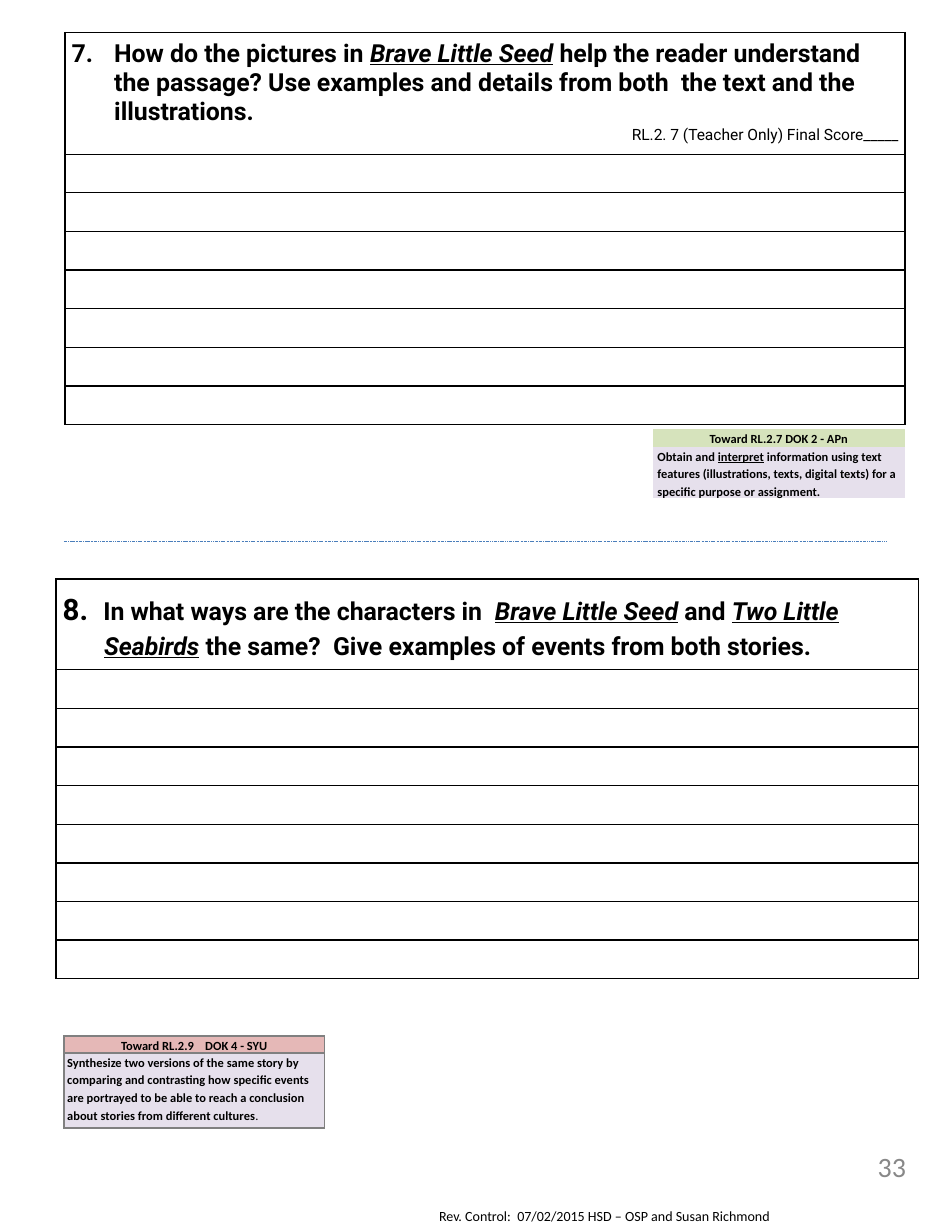
from dataclasses import dataclass, replace
from typing import Optional

from lxml import etree
from pptx import Presentation
from pptx.dml.color import RGBColor
from pptx.enum.dml import MSO_LINE
from pptx.enum.shapes import MSO_CONNECTOR
from pptx.enum.text import MSO_ANCHOR, PP_ALIGN
from pptx.oxml.ns import qn
from pptx.util import Inches, Pt

LEFT, CENTER, RIGHT = PP_ALIGN.LEFT, PP_ALIGN.CENTER, PP_ALIGN.RIGHT
TOP, MIDDLE = MSO_ANCHOR.TOP, MSO_ANCHOR.MIDDLE
STRAIGHT, DASH_DOT_DOT = MSO_CONNECTOR.STRAIGHT, MSO_LINE.DASH_DOT_DOT

BLACK = RGBColor(0x00, 0x00, 0x00)
GREY = RGBColor(0x80, 0x80, 0x80)
PAGE_GREY = RGBColor(0x88, 0x88, 0x88)
GREEN = RGBColor(0xD6, 0xE3, 0xBC)
PINK = RGBColor(0xE5, 0xB8, 0xB7)
LAVENDER = RGBColor(0xE6, 0xE0, 0xEC)
DIVIDER_BLUE = RGBColor(0x4A, 0x7E, 0xBB)

PLAIN_TABLE_STYLE = "{2D5ABB26-0587-4C30-8999-92F81FD0307C}"
ANSWER_ROW = 0.345
QUESTION_INSET = 0.06


@dataclass(frozen=True)
class Span:
    text: str
    size: float
    font: str = "Calibri"
    bold: bool = False
    italic: bool = False
    underline: bool = False
    color: RGBColor = BLACK


@dataclass(frozen=True)
class Question:
    left: float
    top: float
    width: float
    header_height: float
    answer_lines: int
    spans: list[Span]
    indent: float
    line_spacing: float = 1.0
    number: Optional[int] = None
    score: Optional[Span] = None


@dataclass(frozen=True)
class Standard:
    left: float
    top: float
    width: float
    heights: tuple[float, float]
    inset: float
    heading: str
    heading_fill: RGBColor
    spans: list[Span]
    border: Optional[RGBColor] = None


def write(paragraph, spans, *, align=LEFT, line_spacing=1.0, indent=0.0, number=None):
    """Fill a paragraph with formatted runs, hanging and numbered if asked."""
    paragraph.alignment = align
    paragraph.line_spacing = line_spacing
    properties = paragraph._p.get_or_add_pPr()
    if indent:
        properties.set("marL", str(Inches(indent)))
        properties.set("indent", str(-Inches(indent)))
    if number:
        etree.SubElement(properties, qn("a:buFont"), typeface="+mj-lt")
        etree.SubElement(properties, qn("a:buAutoNum"), type="arabicPeriod", startAt=str(number))
    for span in spans:
        run = paragraph.add_run()
        run.text = span.text
        font = run.font
        font.name, font.size = span.font, Pt(span.size)
        font.bold, font.italic, font.underline = span.bold, span.italic, span.underline
        font.color.rgb = span.color


def set_borders(cell, color: RGBColor):
    properties = cell._tc.get_or_add_tcPr()
    for side in ("lnL", "lnR", "lnT", "lnB"):
        line = etree.SubElement(properties, qn(f"a:{side}"), w=str(Pt(1)))
        fill = etree.SubElement(line, qn("a:solidFill"))
        etree.SubElement(fill, qn("a:srgbClr"), val=str(color))


def set_insets(frame, horizontal: float, vertical: float):
    frame.margin_left = frame.margin_right = Inches(horizontal)
    frame.margin_top = frame.margin_bottom = Inches(vertical)


def add_column(slide, left: float, top: float, width: float, heights, border):
    """Add a one-column table without a style and return its cells."""
    table = slide.shapes.add_table(
        len(heights), 1, Inches(left), Inches(top), Inches(width), Inches(sum(heights))
    ).table
    table.first_row = table.horz_banding = False
    table._tbl.tblPr.find(qn("a:tableStyleId")).text = PLAIN_TABLE_STYLE
    for row, height in zip(table.rows, heights):
        row.height = Inches(height)
    cells = list(table.iter_cells())
    for cell in cells:
        if border is not None:
            set_borders(cell, border)
        set_insets(cell, QUESTION_INSET, 0)
    return cells


def add_question(slide, question: Question):
    heights = [question.header_height] + [ANSWER_ROW] * question.answer_lines
    header = add_column(slide, question.left, question.top, question.width, heights, BLACK)[0]
    set_insets(header, QUESTION_INSET, QUESTION_INSET)
    frame = header.text_frame
    write(frame.paragraphs[0], question.spans, indent=question.indent,
          line_spacing=question.line_spacing, number=question.number)
    if question.score:
        write(frame.add_paragraph(), [question.score], align=RIGHT, indent=0.25)


def add_standard(slide, standard: Standard):
    heading, body = add_column(slide, standard.left, standard.top, standard.width,
                               standard.heights, standard.border)
    for cell, fill in ((heading, standard.heading_fill), (body, LAVENDER)):
        set_insets(cell, standard.inset, 0)
        cell.fill.solid()
        cell.fill.fore_color.rgb = fill
    heading.vertical_anchor = MIDDLE
    write(heading.text_frame.paragraphs[0], [replace(LABEL, text=standard.heading)],
          align=CENTER, line_spacing=1.15)
    write(body.text_frame.paragraphs[0], standard.spans, line_spacing=1.15)


def add_note(slide, left, top, width, height, span: Span, *, align=LEFT, anchor=TOP, insets=(0.11, 0.05)):
    frame = slide.shapes.add_textbox(Inches(left), Inches(top), Inches(width), Inches(height)).text_frame
    frame.word_wrap = True
    frame.vertical_anchor = anchor
    set_insets(frame, *insets)
    write(frame.paragraphs[0], [span], align=align)


def add_divider(slide, left: float, right: float, y: float):
    divider = slide.shapes.add_connector(STRAIGHT, Inches(left), Inches(y), Inches(right), Inches(y))
    divider.line.color.rgb = DIVIDER_BLUE
    divider.line.width = Pt(0.25)
    divider.line.dash_style = DASH_DOT_DOT
    etree.SubElement(divider._element.spPr, qn("a:effectLst"))


PROMPT = Span("", 16, "Roboto", bold=True)
STORY = replace(PROMPT, italic=True, underline=True)
LABEL = Span("", 8, bold=True)

QUESTIONS = [
    Question(0.5, 5.17, 7.7, 0.8, 8, [
        replace(PROMPT, text="8. ", size=19),
        replace(PROMPT, text=" ", size=20, bold=False),
        replace(PROMPT, text="In what ways are the characters in  "),
        replace(STORY, text="Brave Little Seed"),
        replace(PROMPT, text=" and "),
        replace(STORY, text="Two Little Seabirds"),
        replace(PROMPT, text=" the same?  Give examples of events from both stories."),
    ], indent=0.37, line_spacing=1.15),
    Question(0.58, 0.29, 7.5, 1.08, 7, [
        replace(PROMPT, text="How do the pictures in "),
        replace(STORY, text="Brave Little Seed"),
        replace(PROMPT, text=" help the reader understand the passage? Use examples and details "
                             "from both  the text and the illustrations."),
    ], indent=0.38, number=7, score=Span("RL.2. 7 (Teacher Only) Final Score_____", 10, "Roboto")),
]

STANDARDS = [
    Standard(5.83, 3.83, 2.25, (0.16, 0.45), 0.04, "Toward RL.2.7 DOK 2 - APn", GREEN, [
        replace(LABEL, text="Obtain and "),
        replace(LABEL, text="interpret", underline=True),
        replace(LABEL, text=" information using text features (illustrations, texts, digital texts) "
                            "for a specific purpose or assignment."),
    ]),
    Standard(0.57, 9.25, 2.33, (0.15, 0.67), 0.03, "Toward RL.2.9    DOK 4 - SYU", PINK, [
        replace(LABEL, text="Synthesize two versions of the same story by comparing and contrasting "
                            "how specific events are portrayed to be able to reach a conclusion "
                            "about stories from different cultures"),
        replace(LABEL, text=".", bold=False),
    ], border=GREY),
]


def main():
    presentation = Presentation()
    presentation.slide_width, presentation.slide_height = Inches(8.5), Inches(11)
    slide = presentation.slides.add_slide(presentation.slide_layouts[6])

    # Footer and page number
    add_note(slide, 3.81, 10.73, 4.25, 0.26,
             Span("Rev. Control:  07/02/2015 HSD – OSP and Susan Richmond", 9))
    add_note(slide, 7.17, 10.25, 0.92, 0.33, Span("33", 18, color=PAGE_GREY),
             align=RIGHT, anchor=MIDDLE, insets=(0, 0))

    # Questions with answer lines, then the standards they assess
    for question in QUESTIONS:
        add_question(slide, question)
    for standard in STANDARDS:
        add_standard(slide, standard)

    # Divider between the two questions
    add_divider(slide, 0.57, 7.92, 4.83)
    presentation.save("out.pptx")


if __name__ == "__main__":
    main()
